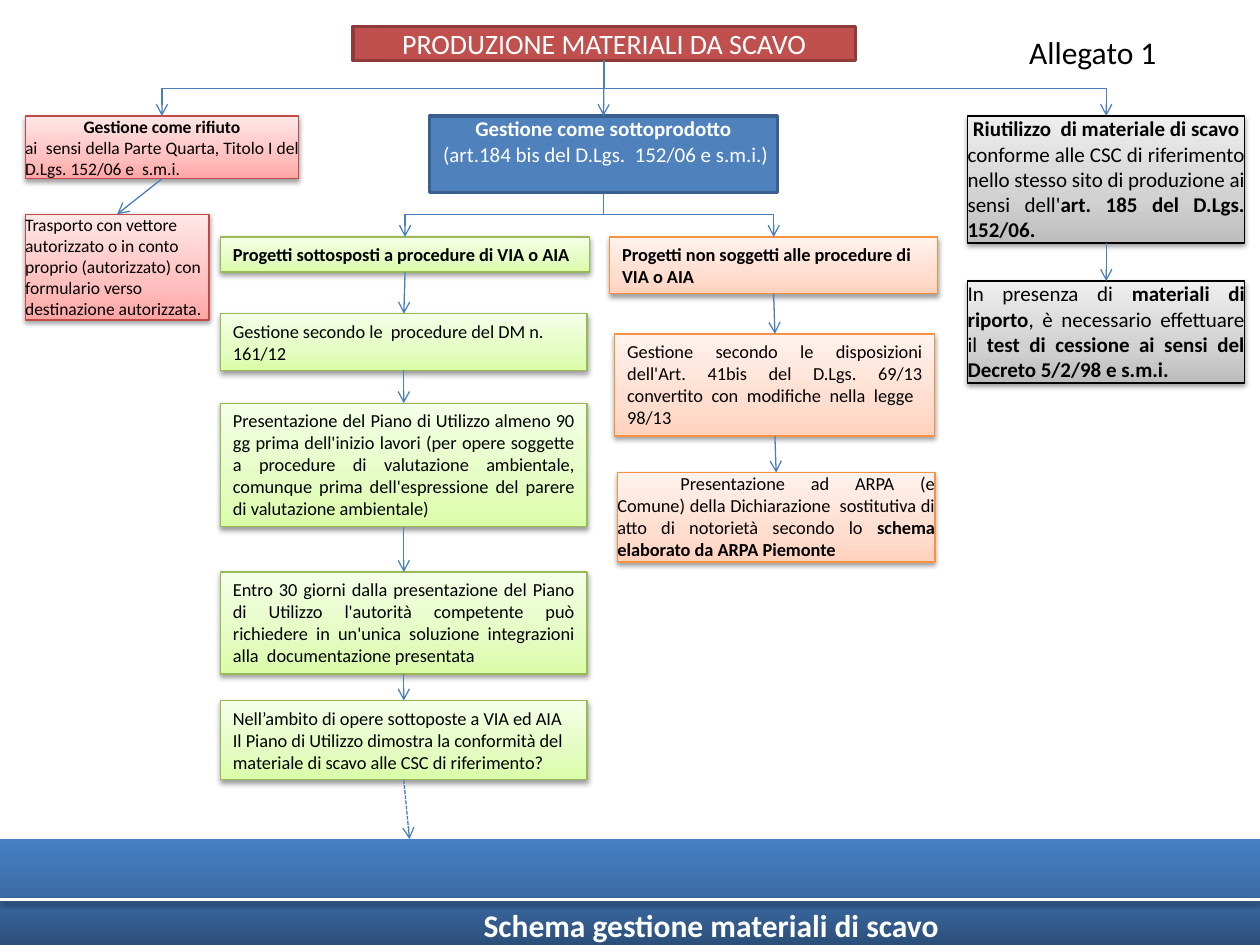
from lxml import etree
from pptx import Presentation
from pptx.dml.color import RGBColor
from pptx.enum.dml import MSO_LINE
from pptx.enum.shapes import MSO_CONNECTOR, MSO_SHAPE
from pptx.enum.text import MSO_ANCHOR, PP_ALIGN
from pptx.oxml.ns import qn
from pptx.util import Inches, Pt

LEFT, CENTER, JUSTIFY = PP_ALIGN.LEFT, PP_ALIGN.CENTER, PP_ALIGN.JUSTIFY
STRAIGHT, ELBOW = MSO_CONNECTOR.STRAIGHT, MSO_CONNECTOR.ELBOW
TOP_SIDE, BOTTOM_SIDE = 0, 2
FONT, ARROW_COLOR = "Calibri", "4B7EBC"

# Fill (one colour, or stops from bottom to top), line colour, line width, text colour
STYLES = {
    "title": ("C0504D", "8E3B39", 2, "FFFFFF"),
    "blue": ("4F81BD", "3A5F8C", 2, "FFFFFF"),
    "red": ([(0, "FFA6A5"), (35, "FFC0BF"), (100, "FFE7E7")], "BF4C48", 0.75, "000000"),
    "gray": ([(0, "BDBDBD"), (35, "D1D1D1"), (100, "EEEEEE")], "000000", 0.75, "000000"),
    "green": ([(0, "DAFDA7"), (35, "E4FCC2"), (100, "F5FFE7")], "98B955", 0.75, "000000"),
    "orange": ([(0, "FFD2BD"), (35, "FFDED0"), (100, "FFF2ED")], "F69240", 0.75, "000000"),
}
BAND_STOPS = [(0, "2A4C75"), (50, "3C6CA6"), (100, "4780C5")]

# Box: style, (left, top, width, height), text size, has margins, paragraphs of (text, bold) runs
BOXES = {
    "produzione": ("title", (2.8, 0.21, 3.99, 0.27), 16, False, [
        (CENTER, [("PRODUZIONE MATERIALI DA SCAVO", False)])]),
    "rifiuto": ("red", (0.2, 0.92, 2.17, 0.5), 10, False, [
        (CENTER, [("Gestione come rifiuto", True)]),
        (JUSTIFY, [("ai  sensi della Parte Quarta, Titolo I del D.Lgs. 152/06 e  s.m.i.", False)])]),
    "trasporto": ("red", (0.2, 1.7, 1.46, 0.84), 10, False, [
        (LEFT, [("Trasporto con vettore autorizzato o in conto proprio (autorizzato) con "
                 "formulario verso destinazione autorizzata.", False)])]),
    "riutilizzo": ("gray", (7.68, 0.92, 2.2, 1.01), 12, False, [
        (CENTER, [("Riutilizzo  di materiale di scavo", True)]),
        (JUSTIFY, [("conforme alle CSC di riferimento nello stesso sito di produzione ai "
                    "sensi dell'", False), ("art. 185 del D.Lgs. 152/06.", True)])]),
    "riporto": ("gray", (7.68, 2.23, 2.2, 0.81), 12, False, [
        (JUSTIFY, [("In presenza di ", False), ("materiali di riporto", True),
                   (", è necessario effettuare il ", False),
                   ("test di cessione ai sensi del Decreto 5/2/98 e s.m.i.", True)])]),
    "sottoprodotto": ("blue", (3.41, 0.92, 2.76, 0.61), 12, False, [
        (CENTER, [("Gestione come sottoprodotto", True)]),
        (CENTER, [(" (art.184 bis del D.Lgs.  152/06 e s.m.i.)", False)])]),
    "con_via": ("green", (1.75, 1.88, 2.93, 0.28), 10.5, True, [
        (LEFT, [("Progetti sottosposti a procedure di VIA o AIA", True)])]),
    "dm161": ("green", (1.75, 2.49, 2.91, 0.45), 10.5, True, [
        (LEFT, [("Gestione secondo le  procedure del DM n. 161/12", False)])]),
    "piano": ("green", (1.75, 3.2, 2.91, 0.98), 10.5, True, [
        (JUSTIFY, [("Presentazione del Piano di Utilizzo almeno 90 gg prima dell'inizio lavori "
                    "(per opere soggette a procedure di valutazione ambientale, comunque prima "
                    "dell'espressione del parere di valutazione ambientale)", False)])]),
    "integrazioni": ("green", (1.75, 4.54, 2.91, 0.81), 10.5, True, [
        (JUSTIFY, [("Entro 30 giorni dalla presentazione del Piano di Utilizzo l'autorità "
                    "competente può richiedere in un'unica soluzione integrazioni alla  "
                    "documentazione presentata", False)])]),
    "conformita": ("green", (1.75, 5.56, 2.91, 0.63), 10.5, True, [
        (LEFT, [("Nell’ambito di opere sottoposte a VIA ed AIA Il Piano di Utilizzo dimostra la "
                 "conformità del materiale di scavo alle CSC di riferimento?", False)])]),
    "senza_via": ("orange", (4.84, 1.88, 2.6, 0.45), 10.5, True, [
        (LEFT, [("Progetti non soggetti alle procedure di VIA o AIA", True)])]),
    "art41bis": ("orange", (4.88, 2.65, 2.54, 0.81), 10.5, True, [
        (JUSTIFY, [("Gestione secondo le disposizioni dell'Art. 41bis del D.Lgs. 69/13 convertito "
                    "con modifiche nella legge  98/13", False)])]),
    "dichiarazione": ("orange", (4.9, 3.75, 2.52, 0.71), 10.5, False, [
        (JUSTIFY, [("\tPresentazione ad ARPA (e Comune) della Dichiarazione  sostitutiva di atto "
                    "di notorietà secondo lo ", False),
                   ("schema elaborato da ARPA Piemonte", True)])]),
}

# Each chain runs downwards with straight arrows; branches leave with elbows
CHAINS = [
    ("produzione", "sottoprodotto"),
    ("rifiuto", "trasporto"),
    ("riutilizzo", "riporto"),
    ("con_via", "dm161", "piano", "integrazioni", "conformita"),
    ("senza_via", "art41bis", "dichiarazione"),
]
BRANCHES = [("produzione", "rifiuto"), ("produzione", "riutilizzo"),
            ("sottoprodotto", "con_via"), ("sottoprodotto", "senza_via")]


def rgb(hex_color):
    return RGBColor.from_string(hex_color)


def add_xml(parent, tag, **attributes):
    return etree.SubElement(parent, qn(tag), {k: str(v) for k, v in attributes.items()})


def set_gradient(shape, stops):
    grad = etree.Element(qn("a:gradFill"), rotWithShape="1")
    stop_list = add_xml(grad, "a:gsLst")
    for position, color in stops:
        add_xml(add_xml(stop_list, "a:gs", pos=position * 1000), "a:srgbClr", val=color)
    add_xml(grad, "a:lin", ang=270 * 60000, scaled=0)
    shape._element.spPr.find(qn("a:prstGeom")).addnext(grad)


def add_shadow(effects):
    shadow = add_xml(effects, "a:outerShdw", blurRad=Pt(3.1), dist=Pt(1.6),
                     dir=90 * 60000, rotWithShape=0)
    add_xml(add_xml(shadow, "a:srgbClr", val="000000"), "a:alpha", val=38000)


def add_rect(place, fill):
    rect = slide.shapes.add_shape(MSO_SHAPE.RECTANGLE, *map(Inches, place))
    rect.shadow.inherit = False
    if isinstance(fill, str):
        rect.fill.solid()
        rect.fill.fore_color.rgb = rgb(fill)
    else:
        set_gradient(rect, fill)
    return rect


def write(frame, paragraphs, size, color, margins=True, wrap=True):
    frame.word_wrap = wrap
    frame.vertical_anchor = MSO_ANCHOR.TOP
    if not margins:
        frame.margin_left = frame.margin_right = frame.margin_top = frame.margin_bottom = 0
    for i, (align, runs) in enumerate(paragraphs):
        paragraph = frame.add_paragraph() if i else frame.paragraphs[0]
        paragraph.alignment = align
        for text, bold in runs:
            run = paragraph.add_run()
            run.text = text
            run.font.name, run.font.size, run.font.bold = FONT, Pt(size), bold
            run.font.color.rgb = rgb(color)


def add_line(kind, x1, y1, x2, y2, color=ARROW_COLOR, width=0.75, arrow=True):
    line = slide.shapes.add_connector(kind, *map(int, (x1, y1, x2, y2)))
    line.line.color.rgb, line.line.width = rgb(color), Pt(width)
    if arrow:
        add_xml(line.line._get_or_add_ln(), "a:tailEnd", type="arrow")
    return line, add_xml(line._element.spPr, "a:effectLst")


def bottom_middle(box):
    return box.left + box.width // 2, box.top + box.height


def top_middle(box):
    return box.left + box.width // 2, box.top


def add_elbow(start, end):
    """Down, across and down again: a standard elbow turned by a quarter."""
    (x1, y1), (x2, y2) = bottom_middle(start), top_middle(end)
    half_drop, half_span = (y2 - y1) / 2, abs(x2 - x1) / 2
    mid_x, mid_y = (x1 + x2) / 2, (y1 + y2) / 2
    side = 1 if x2 > x1 else -1
    elbow, _ = add_line(ELBOW, mid_x + side * half_drop, mid_y - half_span,
                        mid_x - side * half_drop, mid_y + half_span)
    turn = 270 if side > 0 else 90
    elbow._element.spPr.find(qn("a:xfrm")).set("rot", str(turn * 60000))


prs = Presentation()
prs.slide_width, prs.slide_height = Inches(10), Inches(7.5)
slide = prs.slides.add_slide(prs.slide_layouts[6])

# Footer band with its rule and heading
add_rect((0, 6.66, 10, 0.88), BAND_STOPS).line.fill.background()
_, rule_effects = add_line(STRAIGHT, 0, Inches(7.14), Inches(10), Inches(7.14),
                           "FFFFFF", 2, arrow=False)
add_shadow(rule_effects)
heading = slide.shapes.add_textbox(*map(Inches, (3.74, 7.14, 6.26, 0.4))).text_frame
write(heading, [(LEFT, [("Schema gestione materiali di scavo", True)])], 18, "FFFFFF")
heading.vertical_anchor = MSO_ANCHOR.MIDDLE

# Boxes
boxes = {}
for key, (style, place, size, margins, paragraphs) in BOXES.items():
    fill, line_color, line_width, text_color = STYLES[style]
    box = boxes[key] = add_rect(place, fill)
    box.line.color.rgb, box.line.width = rgb(line_color), Pt(line_width)
    if not isinstance(fill, str):
        add_shadow(box._element.spPr.find(qn("a:effectLst")))
    write(box.text_frame, paragraphs, size, text_color, margins)

# Arrows
for chain in CHAINS:
    for start, end in zip(chain, chain[1:]):
        arrow, _ = add_line(STRAIGHT, *bottom_middle(boxes[start]), *top_middle(boxes[end]))
        arrow.begin_connect(boxes[start], BOTTOM_SIDE)
        arrow.end_connect(boxes[end], TOP_SIDE)
for start, end in BRANCHES:
    add_elbow(boxes[start], boxes[end])
onward, _ = add_line(STRAIGHT, *bottom_middle(boxes["conformita"]), Inches(3.25), Inches(6.66))
onward.line.dash_style = MSO_LINE.SQUARE_DOT
onward.begin_connect(boxes["conformita"], BOTTOM_SIDE)

# Annex label
annex = slide.shapes.add_textbox(*map(Inches, (8.07, 0.21, 1.22, 0.4))).text_frame
write(annex, [(LEFT, [("Allegato 1", False)])], 18, "000000", wrap=False)

prs.save("out.pptx")
